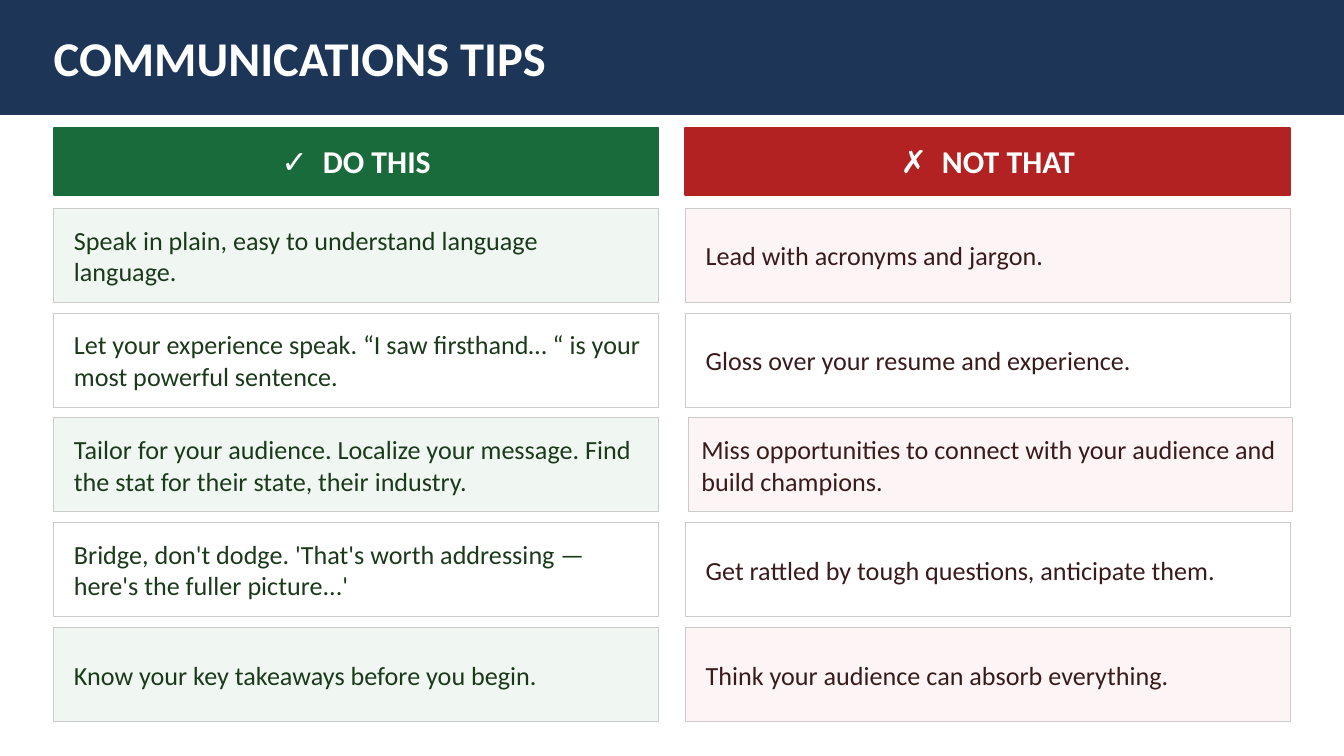
"""Build the communications tips slide: a title band over a do and don't grid."""
from dataclasses import dataclass
from typing import NamedTuple

from pptx import Presentation
from pptx.dml.color import RGBColor
from pptx.enum.shapes import MSO_SHAPE
from pptx.enum.text import MSO_ANCHOR, PP_ALIGN
from pptx.util import Inches, Pt


@dataclass(frozen=True)
class Theme:
    font: str = "Calibri"
    navy: str = "1D3557"
    white: str = "FFFFFF"
    rule: str = "CCCCCC"
    title_size: float = 26
    heading_size: float = 17
    body_size: float = 14
    mark_spacing: float = 2


@dataclass(frozen=True)
class Grid:
    left: float = 0.4
    column_width: float = 4.5
    column_step: float = 4.7
    heading_top: float = 0.95
    heading_height: float = 0.5
    top: float = 1.55
    row_height: float = 0.7
    row_step: float = 0.78
    indent: float = 0.15
    text_width: float = 4.25


class Area(NamedTuple):
    left: float
    top: float
    width: float
    height: float


class TextStyle(NamedTuple):
    size: float
    color: str
    bold: bool = False
    align: PP_ALIGN = PP_ALIGN.LEFT
    inset: bool = False


class Tip(NamedTuple):
    text: str
    shift: float = 0
    inside: bool = False


class Column(NamedTuple):
    mark: str
    heading: str
    accent: str
    tint: str
    ink: str
    tips: tuple[Tip, ...]


THEME = Theme()
GRID = Grid()
WIDTH, BAND_HEIGHT = 10, 0.85
HEIGHT = WIDTH * 9 / 16
COLUMNS = (
    Column("✓", "DO THIS", "1A6B3C", "F0F7F2", "1A3A1A", (
        Tip("Speak in plain, easy to understand language language."),
        Tip("Let your experience speak. “I saw firsthand… “ is your most powerful sentence."),
        Tip("Tailor for your audience. Localize your message. Find the stat for their state, their industry."),
        Tip("Bridge, don't dodge. 'That's worth addressing — here's the fuller picture...'"),
        Tip("Know your key takeaways before you begin."),
    )),
    Column("✗", "NOT THAT", "B22222", "FDF5F5", "3A1A1A", (
        Tip("Lead with acronyms and jargon."),
        Tip("Gloss over your resume and experience."),
        Tip("Miss opportunities to connect with your audience and build champions.", 0.02, True),
        Tip("Get rattled by tough questions, anticipate them."),
        Tip("Think your audience can absorb everything."),
    )),
)


def apply(target: object, values: dict[str, object]) -> None:
    for name, value in values.items():
        setattr(target, name, value)


def add_span(para, text: str, style: TextStyle):
    span = para.add_run()
    span.text = text
    apply(span.font, {"name": THEME.font, "size": Pt(style.size), "bold": style.bold})
    span.font.color.rgb = RGBColor.from_string(style.color)
    return span


def write(box, text: str, style: TextStyle, mark: str = "") -> None:
    frame = box.text_frame
    apply(frame, {"word_wrap": True, "vertical_anchor": MSO_ANCHOR.MIDDLE})
    if not style.inset:
        apply(frame, dict.fromkeys(
            ("margin_left", "margin_top", "margin_right", "margin_bottom"), 0))
    para = frame.paragraphs[0]
    para.alignment = style.align
    if mark:
        span = add_span(para, f"{mark} ", style)
        span._r.get_or_add_rPr().set("spc", str(THEME.mark_spacing * 100))
    add_span(para, text, style)


def add_panel(page, area: Area, fill: str, line: str, line_width: float):
    panel = page.shapes.add_shape(MSO_SHAPE.RECTANGLE, *map(Inches, area))
    panel.shadow.inherit = False
    panel.fill.solid()
    panel.fill.fore_color.rgb = RGBColor.from_string(fill)
    panel.line.color.rgb = RGBColor.from_string(line)
    panel.line.width = Pt(line_width)
    return panel


def add_text(page, area: Area, text: str, style: TextStyle, mark: str = "") -> None:
    write(page.shapes.add_textbox(*map(Inches, area)), text, style, mark)


def add_tip(page, tip: Tip, area: Area, fill: str, ink: str) -> None:
    panel = add_panel(page, area, fill, THEME.rule, 0.5)
    style = TextStyle(THEME.body_size, ink, inset=tip.inside)
    if tip.inside:
        write(panel, tip.text, style)
    else:
        text_area = area._replace(left=area.left + GRID.indent, width=GRID.text_width)
        add_text(page, text_area, tip.text, style)


def add_column(page, index: int, column: Column) -> None:
    left = GRID.left + index * GRID.column_step
    heading = Area(left, GRID.heading_top, GRID.column_width, GRID.heading_height)
    add_panel(page, heading, column.accent, column.accent, 1)
    style = TextStyle(THEME.heading_size, THEME.white, True, PP_ALIGN.CENTER, True)
    add_text(page, heading, column.heading, style, column.mark)
    for row, tip in enumerate(column.tips):
        area = Area(left + tip.shift, GRID.top + row * GRID.row_step,
                    GRID.column_width, GRID.row_height)
        add_tip(page, tip, area, THEME.white if row % 2 else column.tint, column.ink)


def main() -> None:
    deck = Presentation()
    apply(deck, {"slide_width": Inches(WIDTH), "slide_height": Inches(HEIGHT)})
    page = deck.slides.add_slide(deck.slide_layouts[6])
    band = Area(0, 0, WIDTH, BAND_HEIGHT)
    add_panel(page, band, THEME.navy, THEME.navy, 1)
    add_text(page, band._replace(left=GRID.left, width=WIDTH - 2 * GRID.left),
             "COMMUNICATIONS TIPS", TextStyle(THEME.title_size, THEME.white, True))
    for index, column in enumerate(COLUMNS):
        add_column(page, index, column)
    deck.save("out.pptx")


if __name__ == "__main__":
    main()
